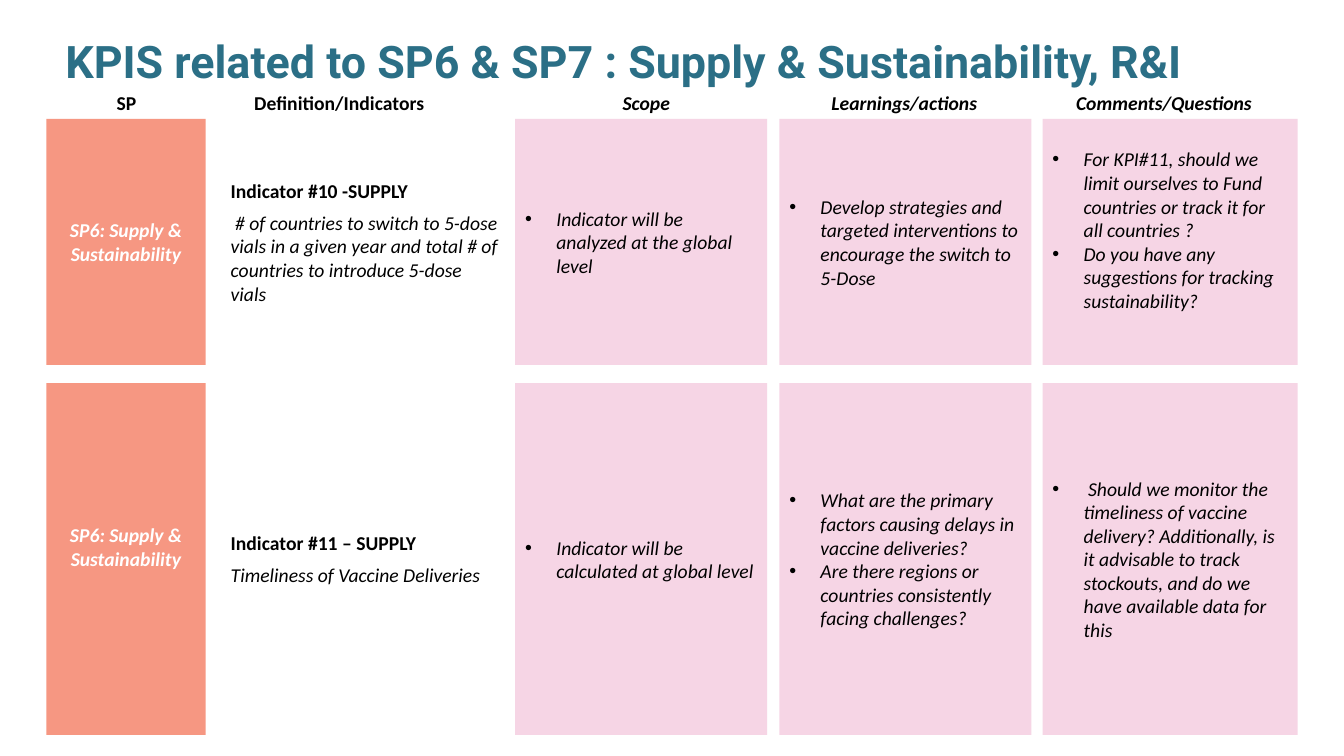
from lxml import etree
from pptx import Presentation
from pptx.dml.color import RGBColor
from pptx.enum.shapes import MSO_SHAPE
from pptx.enum.text import MSO_ANCHOR, PP_ALIGN
from pptx.oxml.ns import qn
from pptx.util import Inches, Pt

RECTANGLE = MSO_SHAPE.RECTANGLE
MIDDLE, BOTTOM = MSO_ANCHOR.MIDDLE, MSO_ANCHOR.BOTTOM
LEFT, CENTER = PP_ALIGN.LEFT, PP_ALIGN.CENTER

TEAL = RGBColor(0x2B, 0x6F, 0x86)
CORAL = RGBColor(0xF6, 0x97, 0x82)
PINK = RGBColor(0xF6, 0xD5, 0xE5)
BLACK = RGBColor(0, 0, 0)
WHITE = RGBColor(0xFF, 0xFF, 0xFF)

LINE_ROOM = 0.24
HEADER_TOP, HEADER_HEIGHT = 0.9, 0.24
HEADERS = [
    ("SP", 0.58, 1.35, False),
    ("Definition/Indicators", 2.37, 1.99, False),
    ("Scope", 5.69, 1.44, True),
    ("Learnings/actions", 8.07, 1.8, True),
    ("Comments/Questions", 10.34, 2.41, True),
]
PILLAR_COLUMN = (0.46, 1.58)
INDICATOR_COLUMN = (2.19, 2.86)
DETAIL_COLUMNS = [(5.11, 2.5, 0.1), (7.73, 2.5, 0.03), (10.34, 2.53, 0.1)]

KPI_ROWS = [
    {
        "top": 1.18, "height": 2.44,
        "pillar": "SP6: Supply & Sustainability", "pillar_room": 0,
        "indicator": "Indicator #10 -SUPPLY",
        "definition": " # of countries to switch to 5-dose vials in a given year "
                      "and total # of countries to introduce 5-dose vials",
        "details": [
            ["Indicator will be analyzed at the global level"],
            ["Develop strategies and targeted interventions to encourage the switch to 5-Dose"],
            ["For KPI#11, should we limit ourselves to Fund countries or track it for all countries ?",
             "Do you have any suggestions for tracking sustainability?"],
        ],
        "comments_room": LINE_ROOM,
    },
    {
        "top": 3.8, "height": 3.49,
        "pillar": "SP6: Supply & Sustainability", "pillar_room": LINE_ROOM,
        "indicator": "Indicator #11 – SUPPLY",
        "definition": "Timeliness of Vaccine Deliveries",
        "details": [
            ["Indicator will be calculated at global level"],
            ["What are the primary factors causing delays in vaccine deliveries?",
             "Are there regions or countries consistently facing challenges?"],
            [" Should we monitor the timeliness of vaccine delivery? Additionally, is it advisable "
             "to track stockouts, and do we have available data for this"],
        ],
        "comments_room": 0,
    },
]


def add_box(slide, box, fill=None, anchor=MIDDLE, right=0.1, bottom=0.05):
    place = [Inches(length) for length in box]
    if fill is None:
        shape = slide.shapes.add_textbox(*place)
    else:
        shape = slide.shapes.add_shape(RECTANGLE, *place)
        shape.shadow.inherit = False
        shape.fill.solid()
        shape.fill.fore_color.rgb = fill
        shape.line.fill.background()
    frame = shape.text_frame
    frame.word_wrap = True
    frame.vertical_anchor = anchor
    frame.margin_right = Inches(right)
    frame.margin_bottom = Inches(bottom)
    return frame


def write(paragraph, text, align=LEFT, size=14, face="Calibri",
          color=BLACK, bold=False, italic=False):
    paragraph.text = text
    paragraph.alignment = align
    font = paragraph.font
    font.name, font.size = face, Pt(size)
    font.bold, font.italic = bold, italic
    font.color.rgb = color


def add_bullet(paragraph):
    properties = paragraph._p.get_or_add_pPr()
    properties.set("marL", str(Inches(0.31)))
    properties.set("indent", str(Inches(-0.31)))
    etree.SubElement(properties, qn("a:buFont")).set("typeface", "Arial")
    etree.SubElement(properties, qn("a:buChar")).set("char", "•")


def add_title(slide, box):
    title = add_box(slide, box, anchor=BOTTOM).paragraphs[0]
    write(title, "KPIS related to SP6 & SP7 : Supply & Sustainability, R&I",
          size=32, face="Roboto", color=TEAL, bold=True)
    title.line_spacing = 0.9


def add_headers(slide, top, height):
    for label, left, width, italic in HEADERS:
        header = add_box(slide, (left, top, width, height))
        write(header.paragraphs[0], label, CENTER, bold=True, italic=italic)


def add_pillar(slide, box, text, room):
    pillar = add_box(slide, box, CORAL, bottom=0.05 + room)
    write(pillar.paragraphs[0], text, CENTER, color=WHITE, bold=True, italic=True)


def add_indicator(slide, box, heading, definition):
    indicator = add_box(slide, box)
    write(indicator.paragraphs[0], heading, bold=True)
    write(indicator.add_paragraph(), definition, italic=True)
    for paragraph in indicator.paragraphs:
        paragraph.space_after = Pt(6)


def add_details(slide, box, points, right, room):
    details = add_box(slide, box, PINK, right=right, bottom=0.05 + room)
    for index, point in enumerate(points):
        paragraph = details.add_paragraph() if index else details.paragraphs[0]
        add_bullet(paragraph)
        write(paragraph, point, italic=True)


def add_kpi_row(slide, row):
    top, height = row["top"], row["height"]

    def cell(left, width):
        return left, top, width, height

    add_pillar(slide, cell(*PILLAR_COLUMN), row["pillar"], row["pillar_room"])
    add_indicator(slide, cell(*INDICATOR_COLUMN), row["indicator"], row["definition"])
    rooms = (0, 0, row["comments_room"])
    for (left, width, right), points, room in zip(DETAIL_COLUMNS, row["details"], rooms):
        add_details(slide, cell(left, width), points, right, room)


def main():
    presentation = Presentation()
    presentation.slide_width = Inches(13.33)
    presentation.slide_height = Inches(7.5)
    slide = presentation.slides.add_slide(presentation.slide_layouts[6])
    add_title(slide, (0.55, 0.18, 12.16, 0.74))
    add_headers(slide, HEADER_TOP, HEADER_HEIGHT)
    for row in KPI_ROWS:
        add_kpi_row(slide, row)
    presentation.save("out.pptx")


if __name__ == "__main__":
    main()
